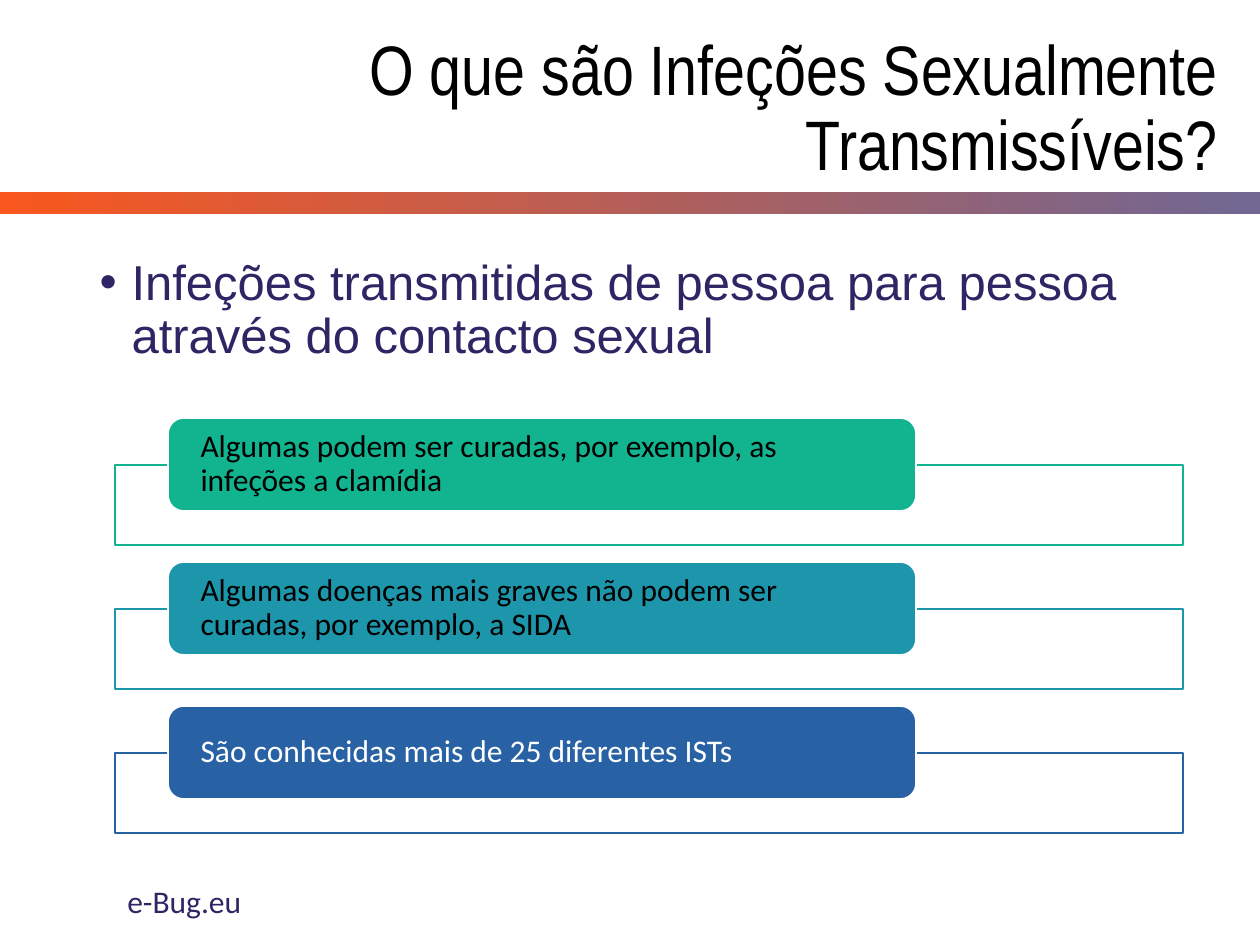
from lxml.etree import SubElement
from pptx import Presentation
from pptx.dml.color import RGBColor
from pptx.enum.shapes import MSO_SHAPE as Shape
from pptx.enum.text import MSO_ANCHOR as Anchor, MSO_AUTO_SIZE as AutoSize, PP_ALIGN as Align
from pptx.oxml.ns import qn
from pptx.util import Pt

PX = 914400 / 126  # EMU in one pixel


def px(*lengths):
    return [round(length * PX) for length in lengths]


def color(hex_code):
    return RGBColor.from_string(hex_code)


deck = Presentation()
deck.slide_width, deck.slide_height = px(1260, 945)
page = deck.slides.add_slide(deck.slide_layouts[1])

# Title, bullet and footer
title, body = page.shapes.title, page.placeholders[1]
title.left, title.top, title.width, title.height = px(32, 19, 1198, 183)
body.left, body.top, body.width, body.height = px(87, 252, 1086, 123)
footer = page.shapes.add_textbox(*px(115, 876, 426, 50))

texts = [
    (title, "O que são Infeções Sexualmente Transmissíveis?", "Arial Narrow", 40, "000000"),
    (body, "Infeções transmitidas de pessoa para pessoa através do contacto sexual", "Arial", 28, "302564"),
    (footer, "e-Bug.eu", "Calibri", 18, "302564"),
]
for box, text, font_name, size, text_color in texts:
    frame = box.text_frame
    frame.text = text
    frame.word_wrap = True
    frame.auto_size = AutoSize.NONE
    font = frame.paragraphs[0].runs[0].font
    font.name, font.size = font_name, Pt(size)
    font.color.rgb = color(text_color)

title.text_frame.vertical_anchor = Anchor.MIDDLE
title_para = title.text_frame.paragraphs[0]
title_para.alignment = Align.RIGHT
title_para.line_spacing = 0.9

body_para = body.text_frame.paragraphs[0]
body_para.line_spacing = 0.9
body_para.space_before = Pt(0)
body_props = body_para._p.get_or_add_pPr()
indent, = px(32)
body_props.set("marL", str(indent))
body_props.set("indent", str(-indent))
SubElement(body_props, qn("a:buFont"), typeface="Arial")
SubElement(body_props, qn("a:buChar"), char="•")

# Gradient band under the title
band = page.shapes.add_shape(Shape.RECTANGLE, *px(0, 192, 1260, 22))
band.shadow.inherit = False
band.line.fill.background()
band.fill.gradient()
band.fill.gradient_angle = 0
for stop, stop_color in zip(band.fill.gradient_stops, ("F9571E", "706793")):
    stop.color.rgb = color(stop_color)

# Three facts: an outlined frame with a rounded label on its top edge
facts = [
    ("Algumas podem ser curadas, por exemplo, as infeções a clamídia", "12B38F", "000000"),
    ("Algumas doenças mais graves não podem ser curadas, por exemplo, a SIDA", "1D96AC", "000000"),
    ("São conhecidas mais de 25 diferentes ISTs", "2862A5", "FFFFFF"),
]
for row, (text, accent, text_color) in enumerate(facts):
    top = 418 + 144 * row
    outline = page.shapes.add_shape(Shape.RECTANGLE, *px(115, top + 47, 1068, 80))
    label = page.shapes.add_shape(Shape.ROUNDED_RECTANGLE, *px(168, top, 748, 93))
    for shape, fill, line in ((outline, "FFFFFF", accent), (label, accent, "FFFFFF")):
        shape.shadow.inherit = False
        shape.fill.solid()
        shape.fill.fore_color.rgb = color(fill)
        shape.line.color.rgb = color(line)
        shape.line.width = Pt(1)
    fill_color = outline._element.spPr.find(qn("a:solidFill"))[0]
    SubElement(fill_color, qn("a:alpha"), val="90000")

    frame = label.text_frame
    frame.text = text
    frame.word_wrap = True
    frame.vertical_anchor = Anchor.MIDDLE
    frame.margin_left = frame.margin_right = px(28)[0]
    frame.margin_top = frame.margin_bottom = 0
    para = frame.paragraphs[0]
    para.alignment = Align.LEFT
    para.line_spacing = 0.9
    font = para.runs[0].font
    font.name, font.size = "Calibri", Pt(18)
    font.color.rgb = color(text_color)

deck.save("out.pptx")
